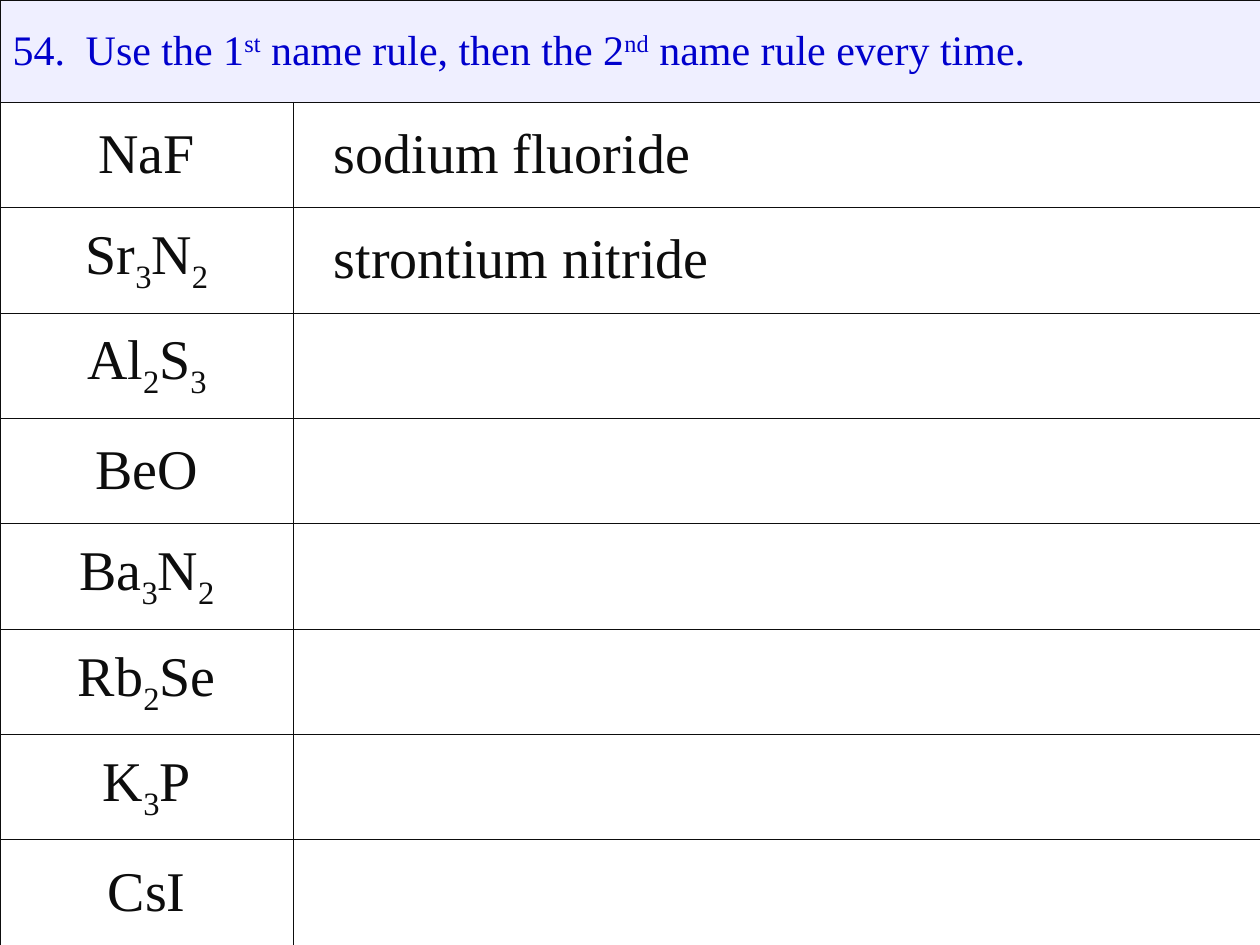
from dataclasses import dataclass
from itertools import groupby

from lxml.etree import SubElement
from pptx import Presentation
from pptx.dml.color import RGBColor
from pptx.enum.text import MSO_ANCHOR, PP_ALIGN
from pptx.oxml.ns import qn
from pptx.util import Inches, Pt


@dataclass(frozen=True)
class Theme:
    font: str = "Times New Roman"
    ink: str = "0D0D0D"
    heading: str = "0000CC"
    heading_fill: str = "EFEFFF"
    heading_size: int = 24
    body_size: int = 32
    border: float = 0.25


THEME = Theme()
WIDTH, HEIGHT = Inches(10), Inches(7.5)
FORMULA_SHARE = 0.233
HEADING_SHARE = 0.108
NAME_MARGIN = Inches(0.32)
NUMBER_TAB = Inches(0.58)
SUPERSCRIPT, SUBSCRIPT = 30000, -25000

HEADING = [
    ("54.\tUse the 1", 0),
    ("st", SUPERSCRIPT),
    (" name rule, then the 2", 0),
    ("nd", SUPERSCRIPT),
    (" name rule every time.", 0),
]
COMPOUNDS = [
    ("NaF", "sodium fluoride"),
    ("Sr3N2", "strontium nitride"),
    ("Al2S3", ""),
    ("BeO", ""),
    ("Ba3N2", ""),
    ("Rb2Se", ""),
    ("K3P", ""),
    ("CsI", ""),
]


def formula_spans(formula):
    return [
        ("".join(letters), SUBSCRIPT if is_digit else 0)
        for is_digit, letters in groupby(formula, str.isdigit)
    ]


def draw_borders(cell):
    properties = cell._tc.get_or_add_tcPr()
    for side in ("a:lnL", "a:lnR", "a:lnT", "a:lnB"):
        line = SubElement(properties, qn(side), w=str(Pt(THEME.border)))
        fill = SubElement(line, qn("a:solidFill"))
        SubElement(fill, qn("a:srgbClr"), val=THEME.ink)


def add_tab_stop(para, position):
    tabs = SubElement(para._p.get_or_add_pPr(), qn("a:tabLst"))
    SubElement(tabs, qn("a:tab"), pos=str(position), algn="l")


def write_spans(cell, spans, size, color, align=PP_ALIGN.LEFT):
    cell.vertical_anchor = MSO_ANCHOR.MIDDLE
    para = cell.text_frame.paragraphs[0]
    para.alignment = align
    for text, baseline in spans:
        span = para.add_run()
        span.text = text
        span.font.name = THEME.font
        span.font.size = Pt(size)
        span.font.color.rgb = RGBColor.from_string(color)
        if baseline:
            span.font._element.set("baseline", str(baseline))


def add_grid(page):
    rows = len(COMPOUNDS) + 1
    table = page.shapes.add_table(rows, 2, 0, 0, WIDTH, HEIGHT).table
    table.first_row = False
    table.horz_banding = False
    table.columns[0].width = int(WIDTH * FORMULA_SHARE)
    table.columns[1].width = WIDTH - table.columns[0].width
    heading_height = int(HEIGHT * HEADING_SHARE)
    for index, row in enumerate(table.rows):
        row.height = (HEIGHT - heading_height) // len(COMPOUNDS) if index else heading_height
    for cell in table.iter_cells():
        draw_borders(cell)
        cell.fill.background()
    return table


def fill_heading(table):
    cell = table.cell(0, 0)
    cell.merge(table.cell(0, 1))
    cell.fill.solid()
    cell.fill.fore_color.rgb = RGBColor.from_string(THEME.heading_fill)
    add_tab_stop(cell.text_frame.paragraphs[0], NUMBER_TAB)
    write_spans(cell, HEADING, THEME.heading_size, THEME.heading)


def fill_compounds(table):
    for row, (formula, name) in enumerate(COMPOUNDS, start=1):
        write_spans(table.cell(row, 0), formula_spans(formula),
                    THEME.body_size, THEME.ink, PP_ALIGN.CENTER)
        if name:
            name_cell = table.cell(row, 1)
            name_cell.margin_left = NAME_MARGIN
            write_spans(name_cell, [(name, 0)], THEME.body_size, THEME.ink)


def main():
    deck = Presentation()
    deck.slide_width, deck.slide_height = WIDTH, HEIGHT
    page = deck.slides.add_slide(deck.slide_layouts[6])
    table = add_grid(page)
    fill_heading(table)
    fill_compounds(table)
    deck.save("out.pptx")


if __name__ == "__main__":
    main()
